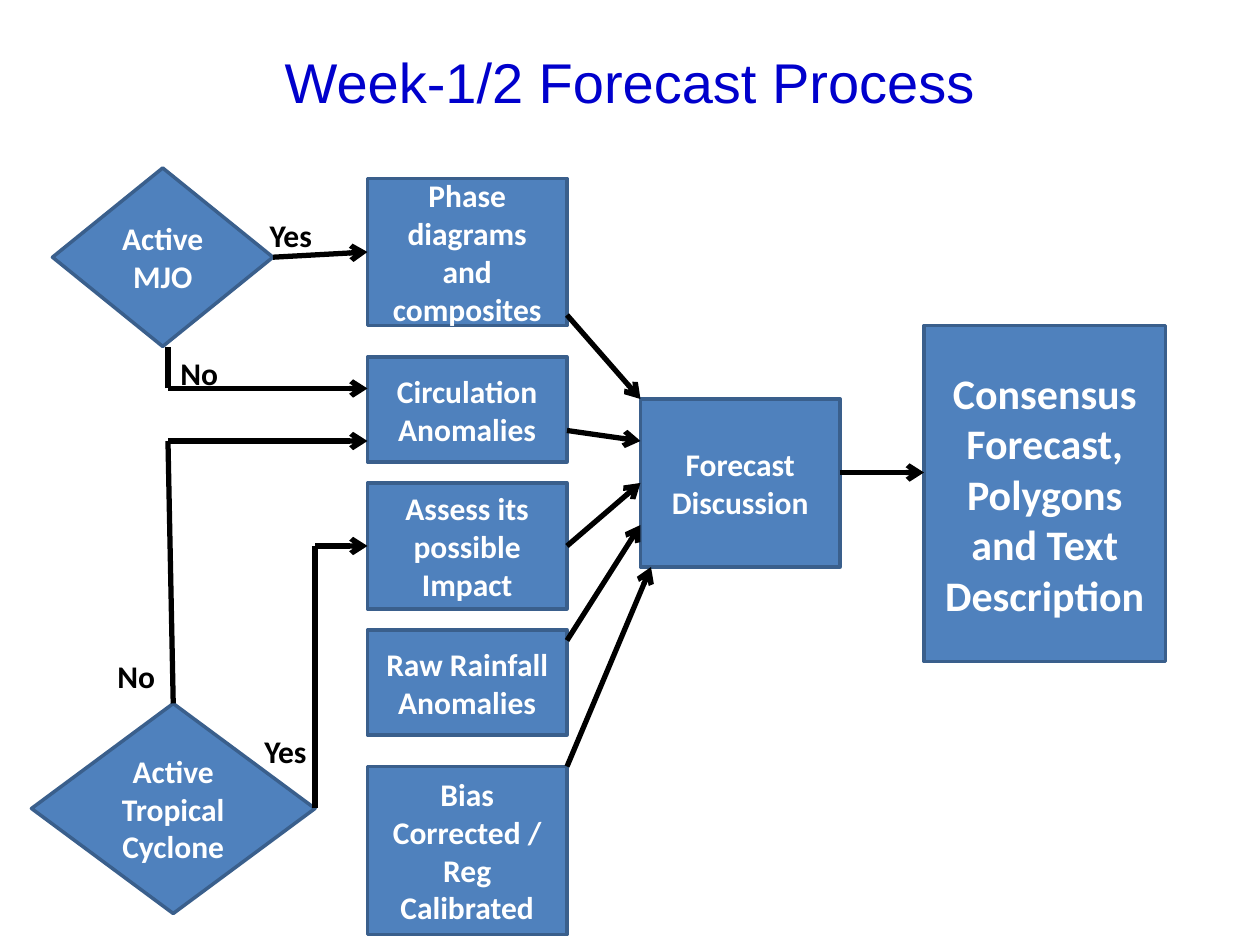
from dataclasses import dataclass
from typing import NamedTuple

from lxml import etree
from pptx import Presentation
from pptx import util as u
from pptx.dml.color import RGBColor
from pptx.enum import shapes, text
from pptx.oxml.ns import qn


@dataclass(frozen=True)
class Theme:
    box_fill: str = "4F81BD"
    box_edge: str = "3A5F8C"
    box_text: str = "FFFFFF"
    ink: str = "000000"
    title: str = "0000CC"
    body_font: str = "Calibri"
    title_font: str = "Arial"
    body_size: int = 18
    result_size: int = 24
    title_size: int = 32
    edge_width: int = 2
    flow_width: int = 3


class Step(NamedTuple):
    wording: str
    col: float
    row: float
    cols: float
    rows: float
    outline: shapes.MSO_SHAPE = shapes.MSO_SHAPE.RECTANGLE
    size: int = Theme.body_size


class Answer(NamedTuple):
    wording: str
    col: float
    row: float
    cols: float


class Flow(NamedTuple):
    start: tuple[float, float]
    end: tuple[float, float]
    arrow: bool = True


THEME = Theme()
DIAMOND = shapes.MSO_SHAPE.DIAMOND

# The slide is a grid of 120 columns and 90 rows, 12 to the inch
CELLS_PER_INCH = 12
COLS, ROWS = 120, 90
INPUT_COL, INPUT_COLS = 35, 19
INPUT_END = INPUT_COL + INPUT_COLS
TALK_COL, RESULT_COL = 61, 88
MJO_TURN, CYCLONE_TURN = 16, 30

DECISIONS = [
    Step("Active MJO", 5, 16, 21, 17, DIAMOND),
    Step("Active Tropical Cyclone", 3, 67, 27, 20, DIAMOND),
]
INPUTS = [
    Step(wording, INPUT_COL, row, INPUT_COLS, rows)
    for wording, row, rows in [
        ("Phase diagrams and composites", 17, 14),
        ("Circulation Anomalies", 34, 10),
        ("Assess its possible Impact", 46, 12),
        ("Raw Rainfall Anomalies", 60, 10),
        ("Bias Corrected / Reg Calibrated", 73, 16),
    ]
]
OUTCOMES = [
    Step("Forecast Discussion", TALK_COL, 38, INPUT_COLS, 16),
    Step("Consensus Forecast, Polygons and Text Description",
         RESULT_COL, 31, 23, 32, size=THEME.result_size),
]
ANSWERS = [
    Answer("Yes", 24.5, 20, 6.5),
    Answer("No", 16, 33.1, 6),
    Answer("No", 10, 62, 6),
    Answer("Yes", 24, 69.1, 6.5),
]
FLOWS = [
    # From the MJO decision
    Flow((26, 24.5), (INPUT_COL, 24)),
    Flow((MJO_TURN, 37), (MJO_TURN, 33), arrow=False),
    Flow((MJO_TURN, 37), (INPUT_COL, 37)),
    # From the cyclone decision
    Flow((16.5, 67), (MJO_TURN, 42), arrow=False),
    Flow((MJO_TURN, 42), (INPUT_COL, 42)),
    Flow((CYCLONE_TURN, 77), (CYCLONE_TURN, 52), arrow=False),
    Flow((CYCLONE_TURN, 52), (INPUT_COL, 52)),
    # Inputs to the discussion, then to the result
    *[Flow((INPUT_END, leave), (TALK_COL, reach))
      for leave, reach in [(30, 38), (41, 42), (52, 46), (61, 50)]],
    Flow((INPUT_END, 73), (TALK_COL + 1, 54)),
    Flow((TALK_COL + INPUT_COLS, 45), (RESULT_COL, 45)),
]


def cells(*counts: float) -> list[int]:
    return [u.Inches(count / CELLS_PER_INCH) for count in counts]


def write(frame, wording: str, size: int, color: str, font: str,
          bold: bool = True, centred: bool = True) -> None:
    paragraph = frame.paragraphs[0]
    paragraph.alignment = (text.PP_ALIGN.CENTER if centred
                           else text.PP_ALIGN.LEFT)
    run = paragraph.add_run()
    run.text = wording
    run.font.name = font
    run.font.size = u.Pt(size)
    run.font.bold = bold
    run.font.color.rgb = RGBColor.from_string(color)


def draw_step(slide, step: Step) -> None:
    box = slide.shapes.add_shape(
        step.outline, *cells(step.col, step.row, step.cols, step.rows))
    box.shadow.inherit = False
    box.fill.solid()
    box.fill.fore_color.rgb = RGBColor.from_string(THEME.box_fill)
    box.line.color.rgb = RGBColor.from_string(THEME.box_edge)
    box.line.width = u.Pt(THEME.edge_width)
    box.text_frame.word_wrap = True
    box.text_frame.vertical_anchor = text.MSO_ANCHOR.MIDDLE
    write(box.text_frame, step.wording, step.size, THEME.box_text,
          THEME.body_font)


def draw_answer(slide, answer: Answer) -> None:
    label = slide.shapes.add_textbox(
        *cells(answer.col, answer.row, answer.cols, 4.8))
    label.text_frame.word_wrap = False
    label.text_frame.auto_size = text.MSO_AUTO_SIZE.SHAPE_TO_FIT_TEXT
    write(label.text_frame, answer.wording, THEME.body_size, THEME.ink,
          THEME.body_font, centred=False)


def draw_flow(slide, flow: Flow) -> None:
    link = slide.shapes.add_connector(
        shapes.MSO_CONNECTOR.STRAIGHT, *cells(*flow.start, *flow.end))
    link.line.color.rgb = RGBColor.from_string(THEME.ink)
    link.line.width = u.Pt(THEME.flow_width)
    if flow.arrow:
        etree.SubElement(link.line._get_or_add_ln(), qn("a:tailEnd"),
                         type="arrow")
    etree.SubElement(link._element.spPr, qn("a:effectLst"))


def draw_title(slide, wording: str) -> None:
    title = slide.shapes.add_textbox(*cells(6, 2, COLS - 12, 11.4))
    title.text_frame.word_wrap = True
    title.text_frame.vertical_anchor = text.MSO_ANCHOR.MIDDLE
    write(title.text_frame, wording, THEME.title_size, THEME.title,
          THEME.title_font, bold=False)


def main() -> None:
    deck = Presentation()
    deck.slide_width, deck.slide_height = cells(COLS, ROWS)
    slide = deck.slides.add_slide(deck.slide_layouts[6])

    draw_title(slide, "Week-1/2 Forecast Process")
    for step in DECISIONS + INPUTS + OUTCOMES:
        draw_step(slide, step)
    for flow in FLOWS:
        draw_flow(slide, flow)
    for answer in ANSWERS:
        draw_answer(slide, answer)

    deck.save("out.pptx")


if __name__ == "__main__":
    main()
